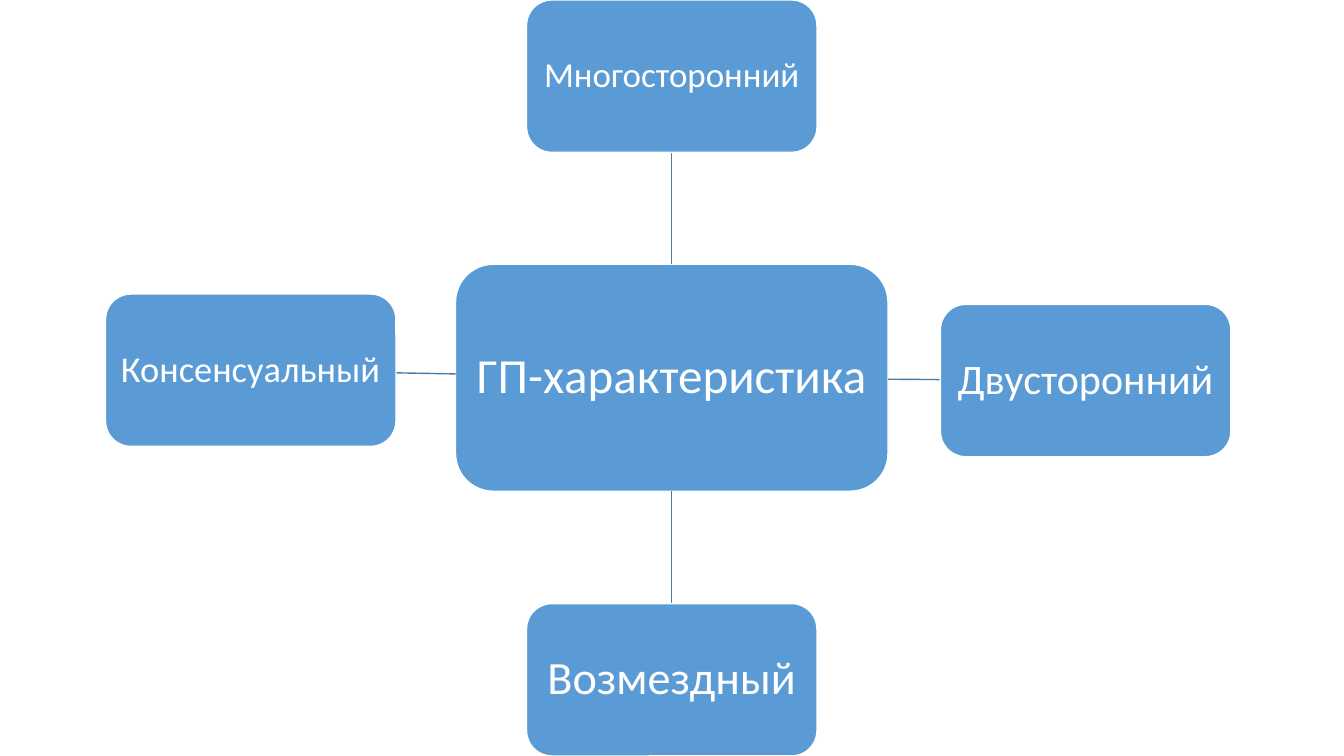
from lxml import etree
from pptx import Presentation
from pptx.dml.color import RGBColor
from pptx.enum import shapes, text
from pptx.oxml.ns import qn
from pptx.util import Cm, Pt

COLOURS = {"box": "5B9BD5", "outline": "FFFFFF", "text": "FFFFFF", "spoke": "497CAB"}
FONT = "Calibri"
SLIDE_SIZE = (33.87, 19.05)
HUB_SIZE = (10.9, 5.72)
TRAIT_SIZE = (7.32, 3.84)
INSET = 0.2

# label, font size, centre in cm
HUB = ("ГП-характеристика", 35, (16.93, 9.52))
TRAITS = [
    ("Многосторонний", 25, (16.93, 1.92)),
    ("Двусторонний", 30, (27.36, 9.59)),
    ("Возмездный", 33, (16.93, 17.13)),
    ("Консенсуальный", 26, (6.32, 9.33)),
]


def colour(name):
    return RGBColor.from_string(COLOURS[name])


def edge_point(centre, size, target):
    """Return where the line from centre to target leaves the box."""
    dx, dy = target[0] - centre[0], target[1] - centre[1]
    share = min(side / 2 / abs(d) for side, d in zip(size, (dx, dy)) if d)
    return Cm(centre[0] + dx * share), Cm(centre[1] + dy * share)


def add_box(slide, label, font_size, centre, size):
    left, top = (c - side / 2 for c, side in zip(centre, size))
    box = slide.shapes.add_shape(
        shapes.MSO_SHAPE.ROUNDED_RECTANGLE,
        Cm(left), Cm(top), Cm(size[0]), Cm(size[1]))
    box.shadow.inherit = False
    box.fill.solid()
    box.fill.fore_color.rgb = colour("box")
    box.line.color.rgb = colour("outline")
    box.line.width = Pt(1)

    frame = box.text_frame
    frame.text = label
    frame.word_wrap = True
    frame.vertical_anchor = text.MSO_ANCHOR.MIDDLE
    frame.margin_left = frame.margin_right = Cm(INSET)
    frame.margin_top = frame.margin_bottom = Cm(INSET)
    paragraph = frame.paragraphs[0]
    paragraph.alignment = text.PP_ALIGN.CENTER
    paragraph.line_spacing = 0.9
    font = paragraph.runs[0].font
    font.name = FONT
    font.size = Pt(font_size)
    font.color.rgb = colour("text")


def add_spoke(slide, hub_centre, trait_centre):
    start = edge_point(hub_centre, HUB_SIZE, trait_centre)
    end = edge_point(trait_centre, TRAIT_SIZE, hub_centre)
    spoke = slide.shapes.add_connector(shapes.MSO_CONNECTOR.STRAIGHT, *start, *end)
    spoke.line.color.rgb = colour("spoke")
    spoke.line.width = Pt(1)
    etree.SubElement(spoke.element.spPr, qn("a:effectLst"))


def main():
    deck = Presentation()
    deck.slide_width, deck.slide_height = (Cm(side) for side in SLIDE_SIZE)
    slide = deck.slides.add_slide(deck.slide_layouts[6])
    add_box(slide, *HUB, HUB_SIZE)
    for label, font_size, centre in TRAITS:
        add_spoke(slide, HUB[2], centre)
        add_box(slide, label, font_size, centre, TRAIT_SIZE)
    deck.save("out.pptx")


if __name__ == "__main__":
    main()
